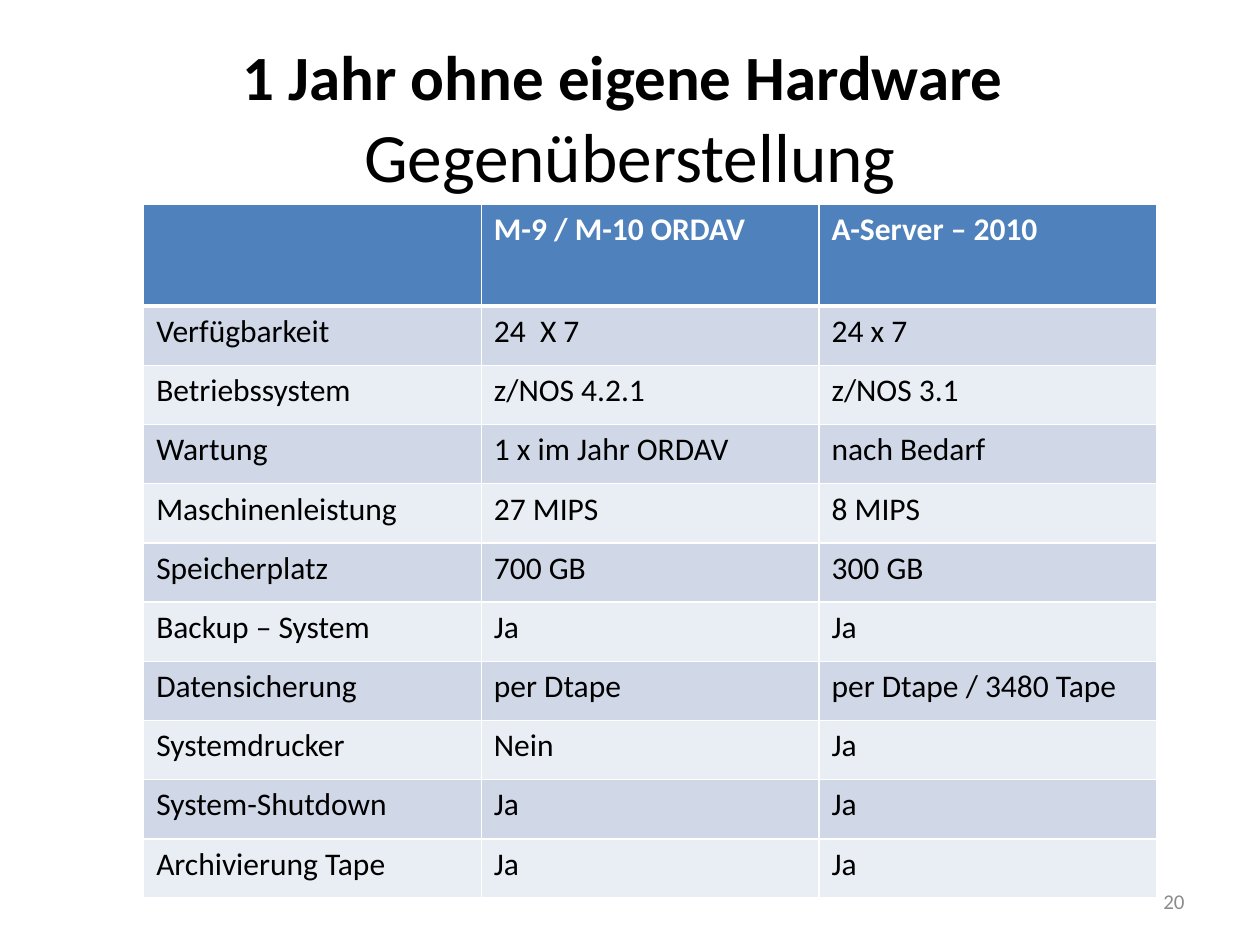
from lxml.etree import SubElement
from pptx import Presentation
from pptx.dml.color import RGBColor
from pptx.enum.text import MSO_ANCHOR, MSO_AUTO_SIZE, PP_ALIGN
from pptx.oxml.ns import qn
from pptx.util import Inches, Pt

HEAD = ["1 Jahr ohne eigene Hardware ", "Gegenüberstellung"]
PAGE = "20"
ROWS = [
    ("", "M-9 / M-10 ORDAV", "A-Server – 2010"),
    ("Verfügbarkeit", "24  X 7", "24 x 7"),
    ("Betriebssystem", "z/NOS 4.2.1", "z/NOS 3.1"),
    ("Wartung", "1 x im Jahr ORDAV", "nach Bedarf"),
    ("Maschinenleistung", "27 MIPS", "8 MIPS"),
    ("Speicherplatz", "700 GB", "300 GB"),
    ("Backup – System", "Ja", "Ja"),
    ("Datensicherung", "per Dtape", "per Dtape / 3480 Tape"),
    ("Systemdrucker", "Nein", "Ja"),
    ("System-Shutdown", "Ja", "Ja"),
    ("Archivierung Tape", "Ja", "Ja"),
]
THEME = {
    "font": "Calibri",
    "line": "FFFFFF",
    "fills": {"head": "4F81BD", "odd": "D0D8E8", "even": "E9EDF4"},
    "title": {"size": Pt(36), "bold": True, "color": "000000"},
    "sub": {"size": Pt(39.6), "bold": False, "color": "000000"},
    "page": {"size": Pt(12), "bold": False, "color": "8C8C8C"},
    "head": {"size": Pt(18), "bold": True, "color": "FFFFFF"},
    "body": {"size": Pt(18), "bold": False, "color": "000000"},
}
WIDE, HIGH = Inches(10), Inches(7.5)
COL, TOP, ROW = Inches(2.68), Inches(0.81), Inches(0.47)


def style(font, kind):
    form = dict(THEME[kind], name=THEME["font"])
    font.color.rgb = RGBColor.from_string(form.pop("color"))
    for key, val in form.items():
        setattr(font, key, val)


def place(shape, *box):
    for key, val in zip(("left", "top", "width", "height"), box):
        setattr(shape, key, int(val))


def border(cell, row):
    wide = {"T": 3 if row == 1 else 1, "B": 3 if row == 0 else 1}
    prop = cell._tc.get_or_add_tcPr()
    for side in "LRTB":
        line = SubElement(prop, qn(f"a:ln{side}"), w=str(Pt(wide.get(side, 1))))
        fill = SubElement(line, qn("a:solidFill"))
        SubElement(fill, qn("a:srgbClr"), val=THEME["line"])


def add_title(slide):
    shape = slide.shapes.title
    place(shape, WIDE * 0.05, HIGH * 0.04, WIDE * 0.9, HIGH / 6)
    frame = shape.text_frame
    frame.auto_size = MSO_AUTO_SIZE.NONE
    frame.vertical_anchor = MSO_ANCHOR.MIDDLE
    para = frame.paragraphs[0]
    para.alignment = PP_ALIGN.CENTER
    for num, (text, kind) in enumerate(zip(HEAD, ("title", "sub"))):
        if num:
            para.add_line_break()
        run = para.add_run()
        run.text = text
        style(run.font, kind)


def add_page(slide):
    box = slide.shapes.add_textbox(0, 0, 0, 0)
    place(box, Inches(7.17), Inches(6.95), Inches(2.33), Inches(0.4))
    frame = box.text_frame
    frame.word_wrap = True
    frame.vertical_anchor = MSO_ANCHOR.MIDDLE
    para = frame.paragraphs[0]
    para.alignment = PP_ALIGN.RIGHT
    run = para.add_run()
    run.text = PAGE
    style(run.font, "page")


def add_grid(slide):
    cols, rows = len(ROWS[0]), len(ROWS)
    grid = slide.shapes.add_table(
        rows, cols, Inches(1.14), Inches(1.62), COL * cols, TOP + ROW * (rows - 1)
    ).table
    for col in grid.columns:
        col.width = COL
    for num, texts in enumerate(ROWS):
        grid.rows[num].height = ROW if num else TOP
        tone = ("odd" if num % 2 else "even") if num else "head"
        for cell, text in zip(grid.rows[num].cells, texts):
            border(cell, num)
            cell.fill.solid()
            cell.fill.fore_color.rgb = RGBColor.from_string(THEME["fills"][tone])
            cell.text = text
            style(cell.text_frame.paragraphs[0].font, "body" if num else "head")
            for run in cell.text_frame.paragraphs[0].runs:
                style(run.font, "body" if num else "head")


def main():
    deck = Presentation()
    deck.slide_width, deck.slide_height = WIDE, HIGH
    slide = deck.slides.add_slide(deck.slide_layouts[5])
    add_title(slide)
    add_page(slide)
    add_grid(slide)
    deck.save("out.pptx")


if __name__ == "__main__":
    main()
